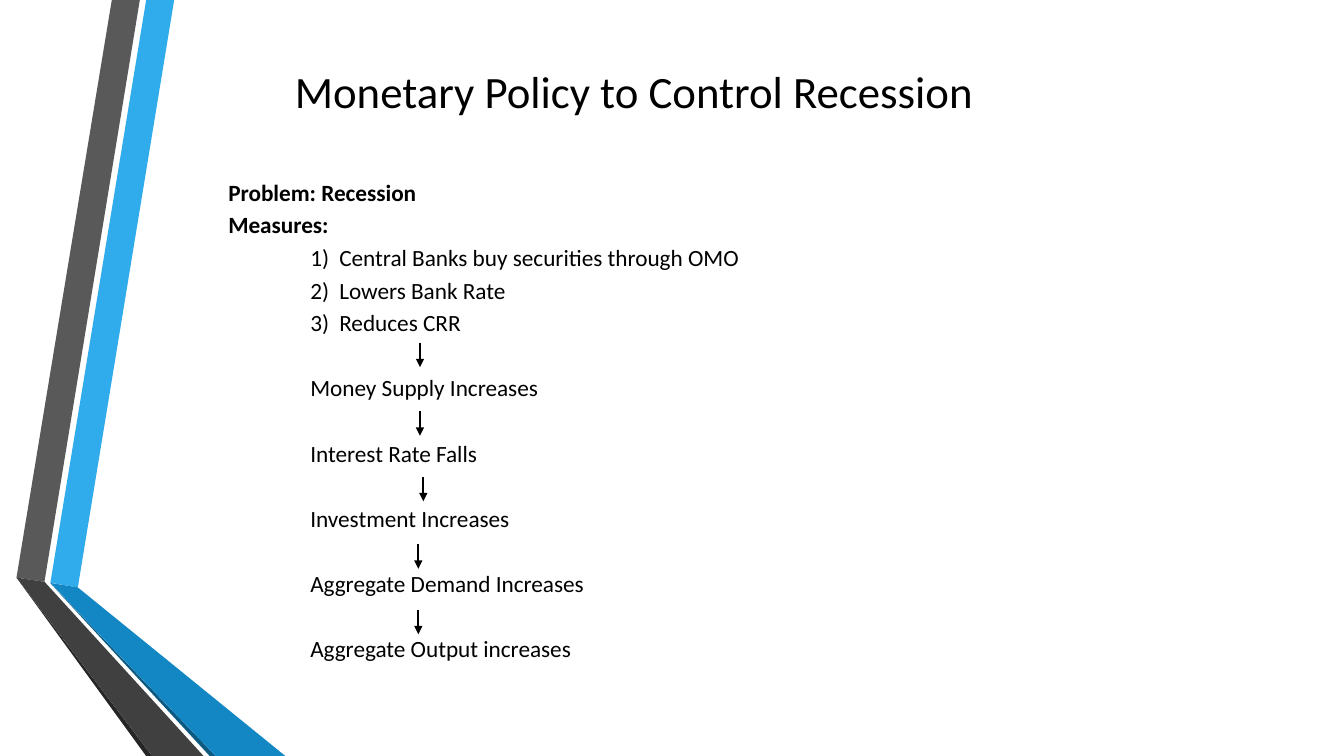
from dataclasses import dataclass

from lxml.etree import SubElement
from pptx import Presentation
from pptx.dml.color import RGBColor
from pptx.enum.shapes import MSO_CONNECTOR
from pptx.enum.text import MSO_ANCHOR, PP_ALIGN
from pptx.oxml.ns import qn
from pptx.util import Pt


@dataclass(frozen=True)
class Theme:
    """Colours, font and type sizes of the slide."""

    font: str = "Calibri"
    ink: str = "000000"
    blue: str = "30ACEC"
    blue_fold: str = "1287C3"
    blue_edge: str = "0C5A82"
    grey: str = "595959"
    grey_fold: str = "404040"
    grey_edge: str = "262626"
    title_size: float = 32
    body_size: float = 16.6
    line_pitch: float = 23.3
    indent: float = 58.6
    number_gap: float = 20.7
    arrow_width: float = 1.5


class SlideBuilder:
    """Draws styled elements on the current slide."""

    def __init__(self, page, theme):
        self.page = page
        self.theme = theme

    def ribbon(self, points, colour):
        """Draw a filled polygon through the given points."""
        corners = [(Pt(x), Pt(y)) for x, y in points]
        builder = self.page.shapes.build_freeform(*corners[0])
        builder.add_line_segments(corners[1:], close=True)
        shape = builder.convert_to_shape()
        shape.shadow.inherit = False
        shape.fill.solid()
        shape.fill.fore_color.rgb = RGBColor.from_string(colour)
        shape.line.fill.background()

    def text_box(self, left, top, width, height, anchor):
        """Add an empty wrapped text box and return its frame."""
        box = self.page.shapes.add_textbox(Pt(left), Pt(top), Pt(width), Pt(height))
        frame = box.text_frame
        frame.word_wrap = True
        frame.vertical_anchor = anchor
        return frame

    def span(self, para, text, size, bold=False):
        """Add one styled run to a paragraph."""
        span = para.add_run()
        span.text = text
        span.font.name = self.theme.font
        span.font.size = Pt(size)
        span.font.bold = bold
        span.font.color.rgb = RGBColor.from_string(self.theme.ink)

    def title(self, text):
        """Add the centred slide title."""
        frame = self.text_box(156, 28.8, 594, 72, MSO_ANCHOR.MIDDLE)
        para = frame.paragraphs[0]
        para.alignment = PP_ALIGN.CENTER
        self.span(para, text, self.theme.title_size)

    def body(self, headings, measures, effects):
        """Add bold headings, numbered measures and spaced effects."""
        frame = self.text_box(156, 115.2, 789, 373.7, MSO_ANCHOR.TOP)
        frame.margin_top = Pt(8.5)
        lines = [(text, "heading") for text in headings]
        lines += [(text, "measure") for text in measures]
        lines += [(text, "effect") for text in effects]
        for index, (text, role) in enumerate(lines):
            para = frame.add_paragraph() if index else frame.paragraphs[0]
            para.line_spacing = Pt(self.theme.line_pitch)
            para.space_before = Pt(self.theme.line_pitch if role == "effect" else 0)
            if role != "heading":
                self.indent(para, numbered=role == "measure")
            self.span(para, text, self.theme.body_size, role == "heading")

    def indent(self, para, numbered):
        """Indent a paragraph, with a hanging number if asked."""
        hang = self.theme.number_gap if numbered else 0
        properties = para._p.get_or_add_pPr()
        properties.set("marL", str(Pt(self.theme.indent + hang)))
        properties.set("indent", str(-Pt(hang)))
        if numbered:
            SubElement(properties, qn("a:buFont"), typeface=self.theme.font)
            SubElement(properties, qn("a:buAutoNum"), type="arabicParenR")

    def down_arrow(self, x, top, length=17.5):
        """Draw a downward arrow."""
        arrow = self.page.shapes.add_connector(
            MSO_CONNECTOR.STRAIGHT, Pt(x), Pt(top), Pt(x), Pt(top + length)
        )
        arrow.line.width = Pt(self.theme.arrow_width)
        arrow.line.color.rgb = RGBColor.from_string(self.theme.ink)
        SubElement(arrow.line._get_or_add_ln(), qn("a:tailEnd"), type="triangle")
        SubElement(arrow._element.spPr, qn("a:effectLst"))


def main():
    """Build and save the slide."""
    deck = Presentation()
    deck.slide_width, deck.slide_height = Pt(960), Pt(540)
    page = deck.slides.add_slide(deck.slide_layouts[6])
    theme = Theme()
    slide = SlideBuilder(page, theme)

    ribbons = [
        ([(36, 416.2), (55.6, 419.6), (124.4, 0), (104.4, 0)], theme.blue),
        ([(99.9, 0), (79.9, 0), (11.8, 412.6), (31.8, 415.6)], theme.grey),
        ([(11.8, 412.6), (104.4, 540), (108.7, 540)], theme.grey_edge),
        ([(36, 416.6), (149.8, 540), (154.1, 540)], theme.blue_edge),
        ([(36, 416.4), (154.1, 540), (203.8, 540), (55.6, 419.6)], theme.blue_fold),
        ([(11.8, 412.6), (108.7, 540), (145.4, 540), (31.8, 415.6)], theme.grey_fold),
    ]
    for points, colour in ribbons:
        slide.ribbon(points, colour)

    slide.title("Monetary Policy to Control Recession")
    slide.body(
        ["Problem: Recession", "Measures:"],
        [
            "Central Banks buy securities through OMO",
            "Lowers Bank Rate",
            "Reduces CRR",
        ],
        [
            "Money Supply Increases",
            "Interest Rate Falls",
            "Investment Increases",
            "Aggregate Demand Increases",
            "Aggregate Output increases",
        ],
    )
    arrows = [(300, 244.8), (300, 293.8), (302.4, 340.6), (298.8, 388.8), (298.8, 435.6)]
    for x, top in arrows:
        slide.down_arrow(x, top)

    deck.save("out.pptx")


if __name__ == "__main__":
    main()
